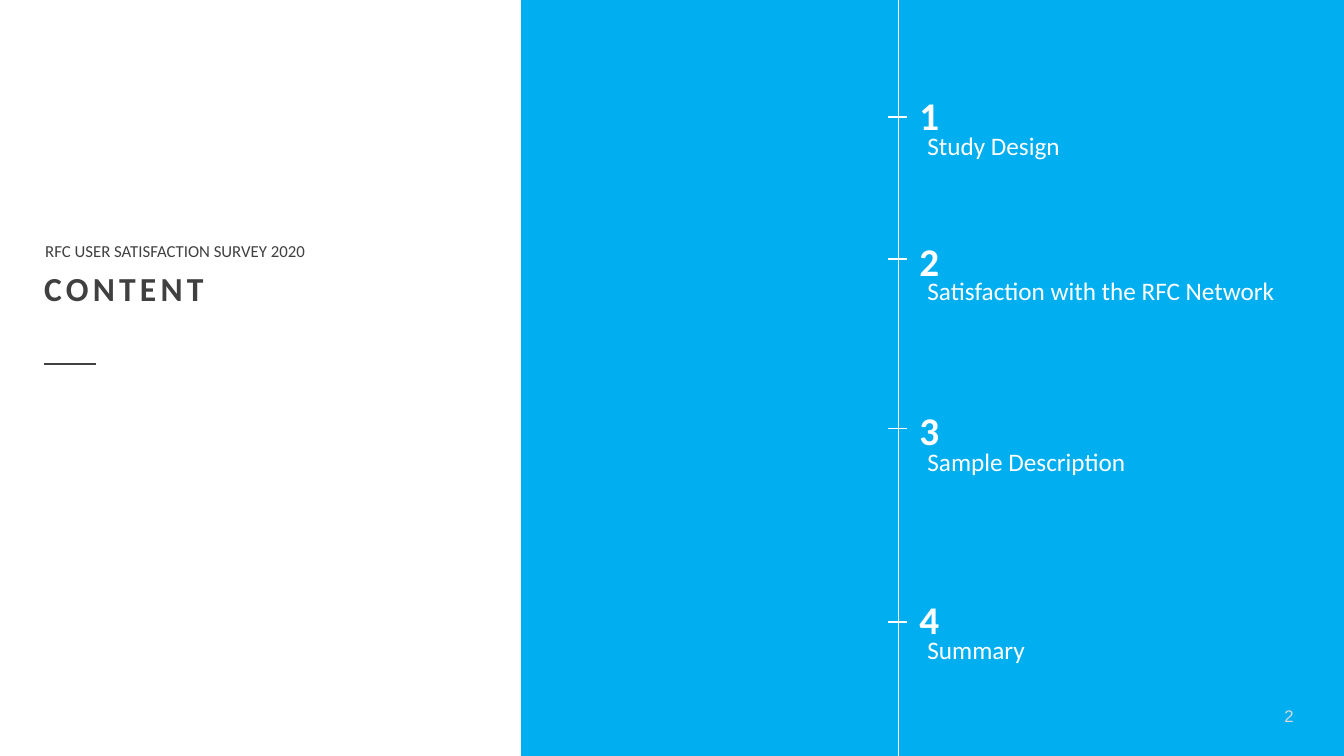
import pptx
import pptx.dml.color
import pptx.enum.shapes
import pptx.enum.text
import pptx.oxml.ns
import pptx.util
from lxml import etree
from pptx.util import Inches

COLORS = {"panel": "01AEEF", "dark": "404040", "white": "FFFFFF", "page": "D9D9D9"}
CHAPTERS = [
    ("Study Design", 1.16, 0.86, 1.24, 1.54),
    ("Satisfaction with the RFC Network", 2.57, 2.31, 2.68, 3.81),
    ("Sample Description", 4.25, 3.98, 4.38, 2.21),
    ("Summary", 6.17, 5.86, 6.24, 1.2),
]


def rgb(name):
    """Return the palette colour with this name."""
    return pptx.dml.color.RGBColor.from_string(COLORS[name])


def add_text(slide, text, left, top, width, height, size=18, color="white",
             font="Calibri", bold=False, spacing=0, align="LEFT", wrap=True,
             fit="SHAPE_TO_FIT_TEXT"):
    """Add a one-paragraph text box."""
    frame = slide.shapes.add_textbox(
        Inches(left), Inches(top), Inches(width), Inches(height)).text_frame
    frame.word_wrap = wrap
    frame.auto_size = getattr(pptx.enum.text.MSO_AUTO_SIZE, fit)
    paragraph = frame.paragraphs[0]
    paragraph.alignment = getattr(pptx.enum.text.PP_ALIGN, align)
    run = paragraph.add_run()
    run.text = text
    run.font.name = font
    run.font.size = pptx.util.Pt(size)
    run.font.bold = bold
    run.font.color.rgb = rgb(color)
    if spacing:
        run.font._element.set("spc", str(spacing * 100))


def add_line(slide, start, end, color="white", weight=1):
    """Add a straight line without shadow."""
    line = slide.shapes.add_connector(
        pptx.enum.shapes.MSO_CONNECTOR.STRAIGHT,
        *(Inches(value) for value in start + end))
    line.line.color.rgb = rgb(color)
    line.line.width = pptx.util.Pt(weight)
    properties = line._element.find(pptx.oxml.ns.qn("p:spPr"))
    etree.SubElement(properties, pptx.oxml.ns.qn("a:effectLst"))


def add_panel(slide):
    """Add the coloured panel on the right."""
    panel = slide.shapes.add_shape(
        pptx.enum.shapes.MSO_SHAPE.RECTANGLE,
        Inches(5.17), Inches(0), Inches(8.17), Inches(7.5))
    panel.shadow.inherit = False
    panel.fill.solid()
    panel.fill.fore_color.rgb = rgb("panel")
    panel.line.fill.background()


def add_chapter(slide, number, title, tick_top, number_top, title_top, title_width):
    """Add a timeline tick with its number and title."""
    add_line(slide, (9, tick_top), (8.81, tick_top))
    add_text(slide, str(number), 9.02, number_top, 0.42, 0.57,
             size=28, bold=True, wrap=False)
    add_text(slide, title, 9.1, title_top, title_width, 0.4, wrap=False)


def main():
    """Build the content slide and save it."""
    presentation = pptx.Presentation()
    presentation.slide_width = Inches(13.33)
    presentation.slide_height = Inches(7.5)
    slide = presentation.slides.add_slide(presentation.slide_layouts[6])
    add_panel(slide)
    add_text(slide, "CONTENT", 0.34, 2.61, 4.64, 0.5,
             size=24, color="dark", bold=True, spacing=3)
    add_text(slide, "RFC USER SATISFACTION SURVEY 2020", 0.35, 2.34, 3.85, 0.3,
             size=12, color="dark")
    add_line(slide, (0.44, 3.61), (0.95, 3.61), color="dark", weight=1.5)
    add_line(slide, (8.91, 0), (8.91, 7.5))
    add_text(slide, "2", 12.31, 6.95, 0.62, 0.4,
             size=12, color="page", font="Arial", align="RIGHT", fit="NONE")
    for number, chapter in enumerate(CHAPTERS, start=1):
        add_chapter(slide, number, *chapter)
    presentation.save("out.pptx")


if __name__ == "__main__":
    main()
